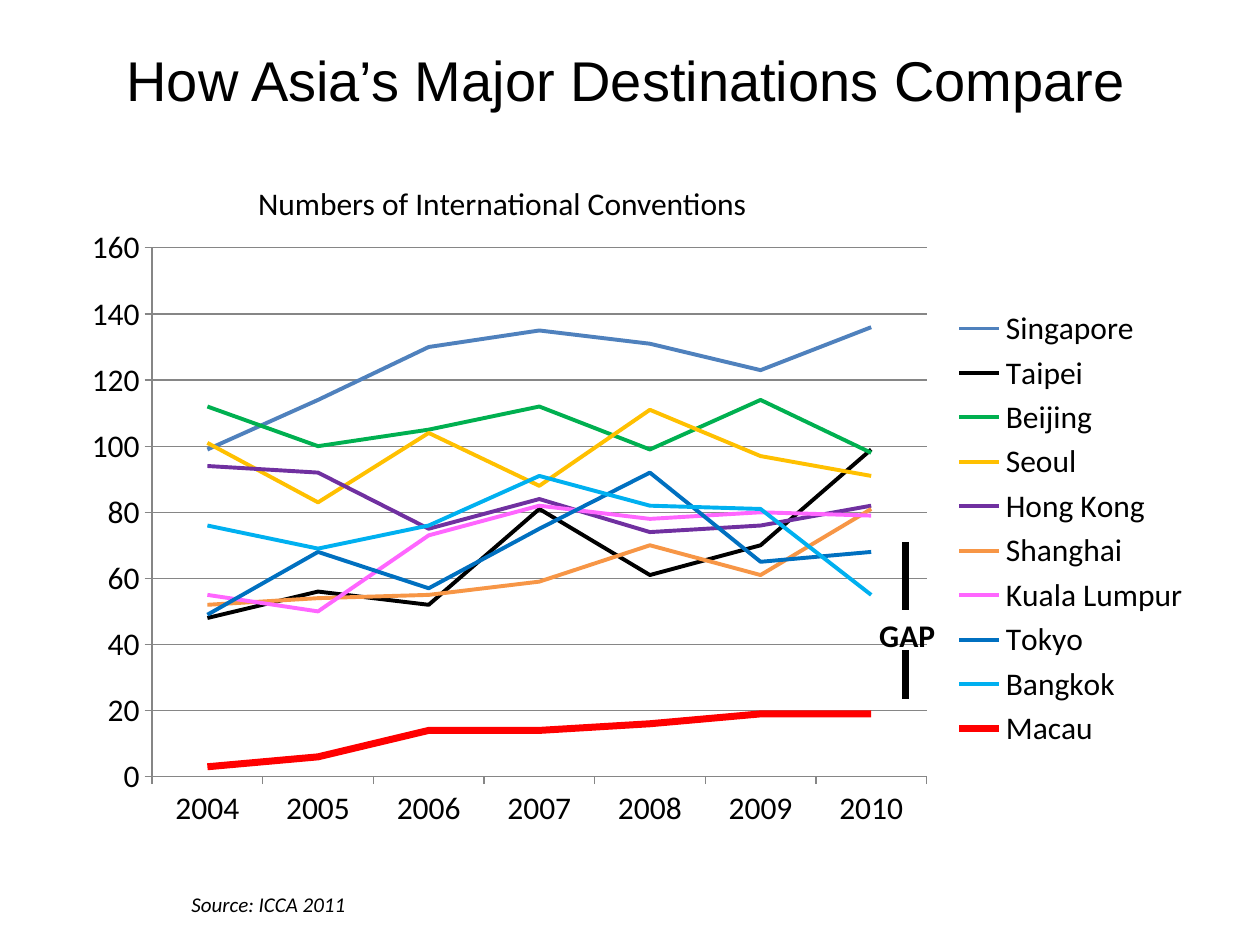
from lxml.etree import SubElement
from pptx import Presentation
from pptx.chart.data import CategoryChartData
from pptx.dml.color import RGBColor
from pptx.enum.chart import XL_CHART_TYPE, XL_LEGEND_POSITION, XL_TICK_MARK
from pptx.enum.shapes import MSO_CONNECTOR
from pptx.enum.text import MSO_ANCHOR, PP_ALIGN
from pptx.oxml.ns import qn
from pptx.util import Inches, Pt

COLORS = {
    "text": "000000",
    "axis": "868686",
    "Singapore": "4F81BD",
    "Taipei": "000000",
    "Beijing": "00B050",
    "Seoul": "FFC000",
    "Hong Kong": "7030A0",
    "Shanghai": "F79646",
    "Kuala Lumpur": "FF66FF",
    "Tokyo": "0070C0",
    "Bangkok": "00B0F0",
    "Macau": "FF0000",
}
YEARS = [str(year) for year in range(2004, 2011)]
CONVENTIONS = {
    "Singapore": (99, 114, 130, 135, 131, 123, 136),
    "Taipei": (48, 56, 52, 81, 61, 70, 99),
    "Beijing": (112, 100, 105, 112, 99, 114, 98),
    "Seoul": (101, 83, 104, 88, 111, 97, 91),
    "Hong Kong": (94, 92, 75, 84, 74, 76, 82),
    "Shanghai": (52, 54, 55, 59, 70, 61, 81),
    "Kuala Lumpur": (55, 50, 73, 82, 78, 80, 79),
    "Tokyo": (49, 68, 57, 75, 92, 65, 68),
    "Bangkok": (76, 69, 76, 91, 82, 81, 55),
    "Macau": (3, 6, 14, 14, 16, 19, 19),
}
PLOT_AREA = {"x": 0.073, "y": 0.05, "w": 0.683, "h": 0.848}


class SlideBuilder:
    """Adds consistently styled elements to one slide."""

    def __init__(self, slide, font="Calibri", size=18):
        self.slide = slide
        self.font = font
        self.size = size

    def color(self, name):
        return RGBColor.from_string(COLORS[name])

    def style_font(self, font, name=None, size=None, bold=False, italic=False):
        font.name = name or self.font
        font.size = Pt(size or self.size)
        font.bold = bold
        font.italic = italic
        font.color.rgb = self.color("text")

    def style_line(self, line, color, width):
        line.color.rgb = self.color(color)
        line.width = Pt(width)

    def text(self, wording, left, top, width, height, align=PP_ALIGN.LEFT,
             anchor=MSO_ANCHOR.TOP, inset=None, **font):
        shape = self.slide.shapes.add_textbox(
            Inches(left), Inches(top), Inches(width), Inches(height))
        frame = shape.text_frame
        frame.word_wrap = True
        frame.vertical_anchor = anchor
        if inset is not None:
            frame.margin_left = frame.margin_right = Inches(inset)
            frame.margin_top = frame.margin_bottom = Inches(inset)
        paragraph = frame.paragraphs[0]
        paragraph.text = wording
        paragraph.alignment = align
        self.style_font(paragraph.font, **font)

    def line(self, x, top, bottom, width=4):
        connector = self.slide.shapes.add_connector(
            MSO_CONNECTOR.STRAIGHT, Inches(x), Inches(top), Inches(x), Inches(bottom))
        self.style_line(connector.line, "text", width)
        SubElement(connector._element.spPr, qn("a:effectLst"))

    def place_plot(self, chart):
        plot_area = chart._chartSpace.chart.plotArea
        layout = plot_area.find(qn("c:layout"))
        if layout is None:
            layout = SubElement(plot_area, qn("c:layout"))
            plot_area.insert(0, layout)
        manual = SubElement(layout, qn("c:manualLayout"))
        settings = {"layoutTarget": "inner", "xMode": "edge", "yMode": "edge", **PLOT_AREA}
        for tag, value in settings.items():
            SubElement(manual, qn(f"c:{tag}")).set("val", str(value))

    def line_chart(self, categories, values, left, top, width, height, emphasis):
        data = CategoryChartData()
        data.categories = categories
        for name, numbers in values.items():
            data.add_series(name, numbers)
        chart = self.slide.shapes.add_chart(
            XL_CHART_TYPE.LINE, Inches(left), Inches(top), Inches(width), Inches(height),
            data).chart
        self.style_font(chart.font)
        chart.has_title = False
        chart.has_legend = True
        chart.legend.position = XL_LEGEND_POSITION.RIGHT
        chart.legend.include_in_layout = False
        chart.plots[0].vary_by_categories = False
        for series in chart.plots[0].series:
            series.smooth = False
            self.style_line(series.format.line, series.name,
                            4 if series.name == emphasis else 2.25)
        for axis in (chart.category_axis, chart.value_axis):
            axis.major_tick_mark = XL_TICK_MARK.OUTSIDE
            axis.minor_tick_mark = XL_TICK_MARK.NONE
            self.style_line(axis.format.line, "axis", 0.75)
        value_axis = chart.value_axis
        value_axis.minimum_scale = 0
        value_axis.maximum_scale = 160
        value_axis.major_unit = 20
        value_axis.has_major_gridlines = True
        self.style_line(value_axis.major_gridlines.format.line, "axis", 0.75)
        self.place_plot(chart)


def main():
    presentation = Presentation()
    presentation.slide_width = Inches(10)
    presentation.slide_height = Inches(7.5)
    builder = SlideBuilder(presentation.slides.add_slide(presentation.slide_layouts[6]))
    builder.text("How Asia’s Major Destinations Compare", 0.47, 0, 9, 1.25,
                 align=PP_ALIGN.CENTER, anchor=MSO_ANCHOR.MIDDLE, name="Arial", size=32)
    builder.line_chart(YEARS, CONVENTIONS, 0.55, 1.72, 9, 4.95, emphasis="Macau")
    builder.text("Numbers of International Conventions", 1.95, 1.41, 5.86, 0.4)
    builder.text("Source: ICCA 2011", 1.47, 7.03, 5, 0.3, inset=0.05, size=12, italic=True)
    builder.text("GAP", 6.88, 4.84, 0.7, 0.4, bold=True)
    for top, bottom in ((4.3, 4.84), (5.16, 5.55)):
        builder.line(7.19, top, bottom)
    presentation.save("out.pptx")


if __name__ == "__main__":
    main()
